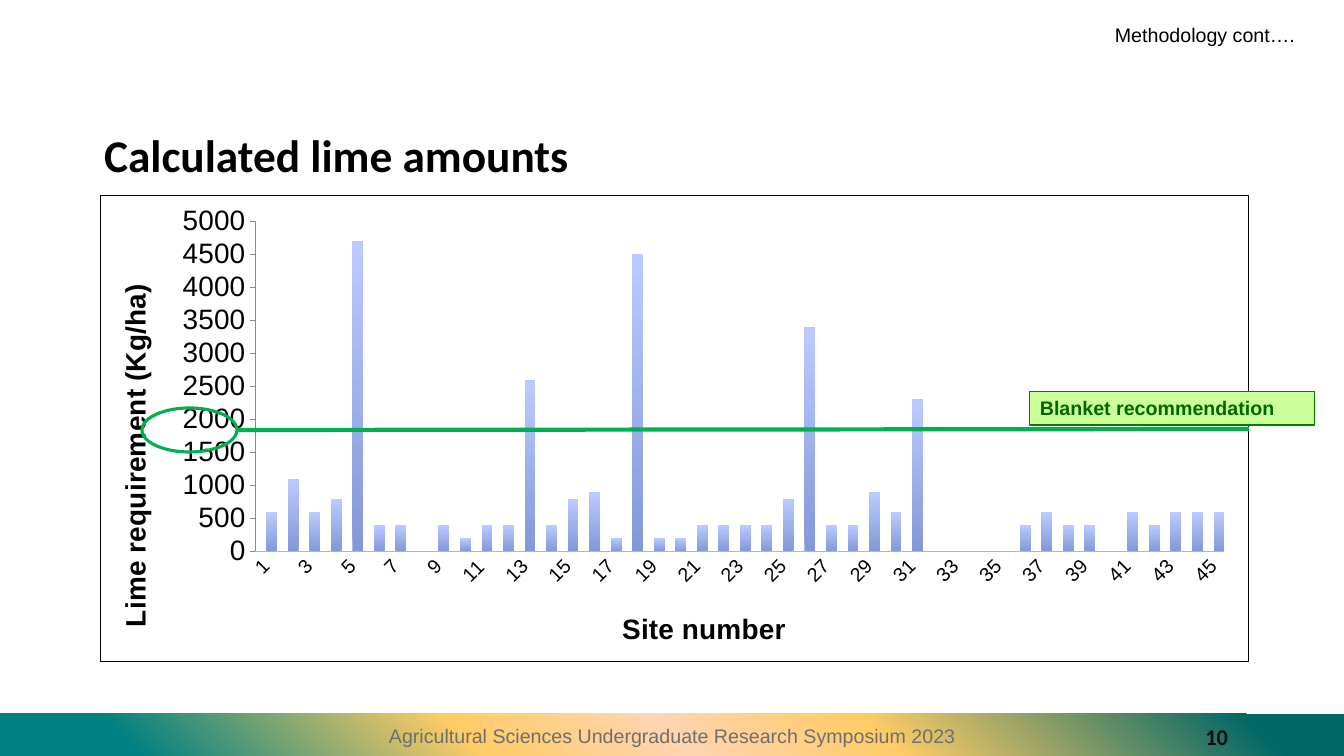
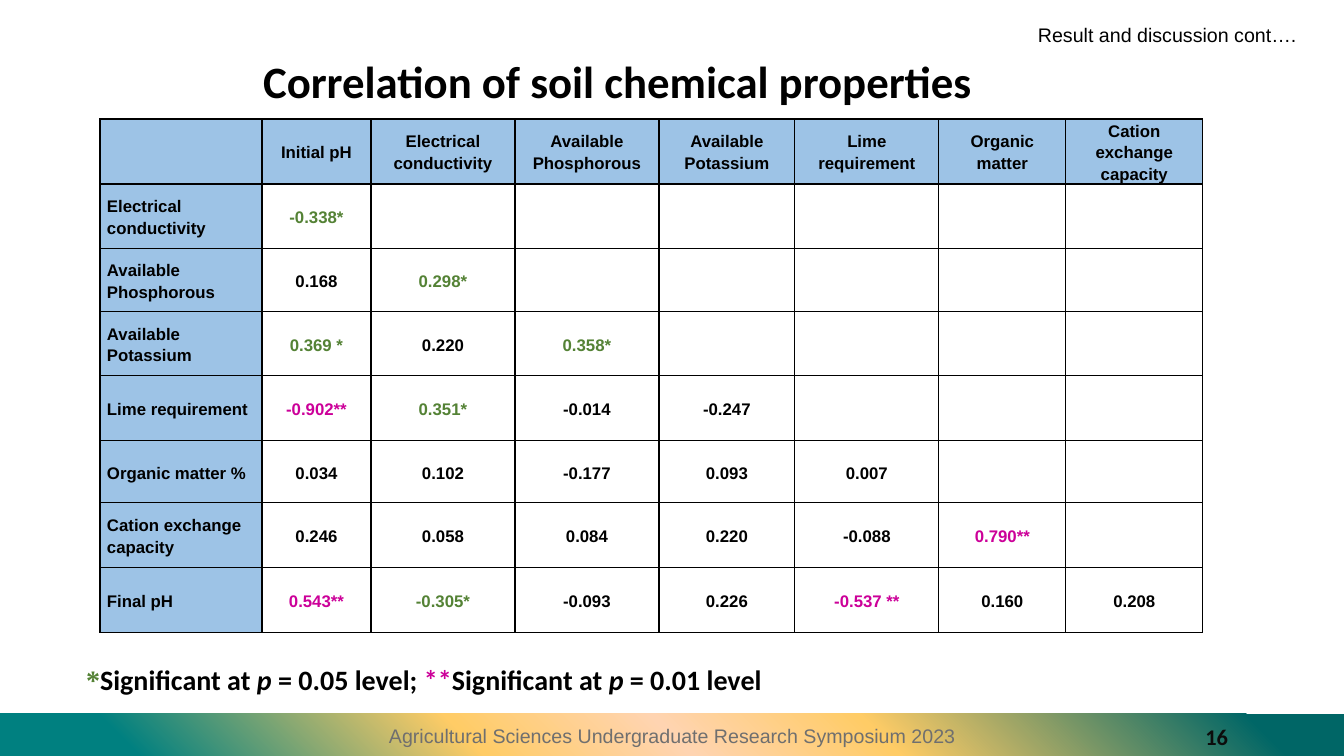
from lxml import etree
from pptx import Presentation
from pptx.chart import data
from pptx.dml import color
from pptx.enum import chart as charts, shapes, text
from pptx.oxml import ns, parse_xml
from pptx.util import Emu, Pt

EMU_PER_PX = 914400 / 100.8
COLORS = {
    "black": "000000", "white": "FFFFFF", "ink": "0C0C0C", "grey": "6F6F6F",
    "axis": "8B8B8B", "baseline": "A4B4E4", "bar_top": "BCCBFF", "bar_bottom": "8298D8",
    "header": "9DC3E6", "green": "548235", "magenta": "CC0099", "marker": "00B050",
    "label_fill": "CCFF99", "label_line": "008000", "label_text": "006600",
}
BAND_STOPS = [(0, "008080"), (10, "008080"), (35, "FFCC66"), (50, "FFD4B1"),
              (65, "FFCC66"), (93, "006666"), (100, "006666")]
FOOTER = "Agricultural Sciences Undergraduate Research Symposium 2023"
TITLE = {"name": "Calibri", "size": Pt(32), "bold": True}
NOTE = {"name": "Calibri", "size": Pt(20), "bold": True, "italic": False}
NUMBER = {"name": "Calibri", "size": Pt(16), "bold": True}
PLAIN = {"name": "Arial", "size": Pt(14), "bold": False}
STRONG = {"name": "Arial", "size": Pt(14), "bold": True}
CELL = {"name": "Arial", "size": Pt(12), "bold": True}
AXIS_TITLE = {"name": "Arial", "size": Pt(20), "bold": True}
LEFT, CENTER, RIGHT = text.PP_ALIGN.LEFT, text.PP_ALIGN.CENTER, text.PP_ALIGN.RIGHT


def px(length):
    return Emu(round(length * EMU_PER_PX))


def rgb(name):
    return color.RGBColor.from_string(COLORS[name])


def assign(target, values):
    for name, value in values.items():
        setattr(target, name, value)


def style_font(font, values, color_name="black"):
    assign(font, values)
    font.color.rgb = rgb(color_name)


def set_layout(parent, index, **values):
    for old in parent.findall(ns.qn("c:layout")):
        parent.remove(old)
    layout = etree.Element(ns.qn("c:layout"))
    manual = etree.SubElement(layout, ns.qn("c:manualLayout"))
    for name, value in values.items():
        etree.SubElement(manual, ns.qn("c:" + name)).set("val", str(value))
    parent.insert(index, layout)


class Deck:
    def __init__(self):
        self.presentation = Presentation()
        assign(self.presentation, {"slide_width": px(1344), "slide_height": px(756)})
        self.slide = None

    def add_slide(self, layout_index):
        layout = self.presentation.slide_layouts[layout_index]
        self.slide = self.presentation.slides.add_slide(layout)

    def place(self, shape, box):
        assign(shape, dict(zip(("left", "top", "width", "height"), map(px, box))))

    def set_text(self, frame, runs, align=LEFT, spacing=1.0, anchor=text.MSO_ANCHOR.MIDDLE):
        assign(frame, {"word_wrap": True, "auto_size": text.MSO_AUTO_SIZE.NONE,
                       "vertical_anchor": anchor})
        paragraph = frame.paragraphs[0]
        assign(paragraph, {"alignment": align, "line_spacing": spacing, "space_before": Pt(0)})
        for content, values, color_name in runs:
            run = paragraph.add_run()
            run.text = content
            style_font(run.font, values, color_name)
        return paragraph

    def title(self, content, box, size=32):
        shape = self.slide.shapes.title
        self.place(shape, box)
        values = {**TITLE, "size": Pt(size)}
        self.set_text(shape.text_frame, [(content, values, "black")], spacing=0.9)

    def body(self, runs, box):
        shape = self.slide.placeholders[1]
        self.place(shape, box)
        paragraph = self.set_text(shape.text_frame, runs, spacing=0.9, anchor=text.MSO_ANCHOR.TOP)
        properties = paragraph._p.get_or_add_pPr()
        properties.set("marL", str(px(12)))
        properties.set("indent", "0")
        etree.SubElement(properties, ns.qn("a:buNone"))

    def text_box(self, content, box, values, color_name, align):
        shape = self.slide.shapes.add_textbox(*map(px, box))
        self.set_text(shape.text_frame, [(content, values, color_name)], align)

    def shape(self, kind, box, fill=None, line=None, width=0.75):
        shape = self.slide.shapes.add_shape(kind, *map(px, box))
        shape.shadow.inherit = False
        if fill:
            shape.fill.solid()
            shape.fill.fore_color.rgb = rgb(fill)
        else:
            shape.fill.background()
        if line:
            shape.line.color.rgb = rgb(line)
            shape.line.width = Pt(width)
        else:
            shape.line.fill.background()
        return shape

    def label(self, content, box, values=PLAIN, color_name="black", fill="white", line=None):
        shape = self.shape(shapes.MSO_SHAPE.RECTANGLE, box, fill, line)
        self.set_text(shape.text_frame, [(content, values, color_name)])

    def line(self, start, end, color_name, width):
        connector = self.slide.shapes.add_connector(
            shapes.MSO_CONNECTOR.STRAIGHT, *map(px, start + end))
        connector.line.color.rgb = rgb(color_name)
        connector.line.width = Pt(width)
        etree.SubElement(connector.element.spPr, ns.qn("a:effectLst"))

    def master_band(self):
        band = self.shape(shapes.MSO_SHAPE.RECTANGLE, (0, 714, 1344, 42))
        stops = "".join(f'<a:gs pos="{position * 1000}"><a:srgbClr val="{value}"/></a:gs>'
                        for position, value in BAND_STOPS)
        gradient = parse_xml(
            f'<a:gradFill {ns.nsdecls("a")} rotWithShape="1"><a:gsLst>{stops}</a:gsLst>'
            '<a:path path="circle"><a:fillToRect t="100000" r="100000"/></a:path></a:gradFill>')
        properties = band.element.spPr
        properties.replace(properties.find(ns.qn("a:noFill")), gradient)
        self.presentation.slide_master.shapes.element.append(band.element)

    def footer(self, number):
        self.text_box(number, (935, 717, 303, 40), NUMBER, "ink", RIGHT)
        self.text_box(FOOTER, (115, 716, 1115, 40), PLAIN, "grey", CENTER)

    def axis(self, axis, caption, size, line, tick, x, y):
        assign(axis, {"has_major_gridlines": False, "has_title": True, "major_tick_mark": tick,
                      "minor_tick_mark": charts.XL_TICK_MARK.NONE})
        style_font(axis.tick_labels.font, {"name": "Arial", "size": Pt(size)})
        axis.format.line.color.rgb = rgb(line)
        run = axis.axis_title.text_frame.paragraphs[0].add_run()
        run.text = caption
        style_font(run.font, AXIS_TITLE)
        set_layout(axis.axis_title.element, 1, xMode="edge", yMode="edge", x=x, y=y)

    def column_chart(self, categories, series, box):
        chart_data = data.CategoryChartData()
        chart_data.categories = categories
        for name, values in series.items():
            chart_data.add_series(name, values)
        chart = self.slide.shapes.add_chart(
            charts.XL_CHART_TYPE.COLUMN_CLUSTERED, *map(px, box), chart_data).chart
        assign(chart, {"has_legend": False, "has_title": False})
        style_font(chart.font, {"name": "Arial", "size": Pt(10)})
        plot = chart.plots[0]
        assign(plot, {"gap_width": 0, "overlap": 0, "vary_by_categories": False})
        for columns in plot.series:
            fill = columns.format.fill
            fill.gradient()
            fill.gradient_angle = 90
            for stop, name in zip(fill.gradient_stops, ("bar_bottom", "bar_top")):
                stop.color.rgb = rgb(name)
        ticks = charts.XL_TICK_MARK
        self.axis(chart.category_axis, "Site number", 14, "baseline", ticks.NONE, 0.45, 0.88)
        self.axis(chart.value_axis, "Lime requirement (Kg/ha)", 20, "axis", ticks.OUTSIDE, 0.01, 0.18)
        assign(chart.value_axis, {"minimum_scale": 0, "maximum_scale": 5000, "major_unit": 500})
        root = chart.element
        root.xpath("//c:catAx/c:txPr/a:bodyPr")[0].set("rot", "-2700000")
        skip = etree.Element(ns.qn("c:tickLblSkip"))
        skip.set("val", "2")
        root.xpath("//c:catAx/c:noMultiLvlLbl")[0].addprevious(skip)
        set_layout(root.xpath("//c:plotArea")[0], 0, layoutTarget="inner", xMode="edge",
                   yMode="edge", x=0.135, y=0.055, w=0.844, h=0.709)
        root.find(ns.qn("c:txPr")).addprevious(parse_xml(
            f'<c:spPr {ns.nsdecls("c", "a")}><a:solidFill><a:srgbClr val="{COLORS["white"]}"/>'
            f'</a:solidFill><a:ln w="9525"><a:solidFill><a:srgbClr val="{COLORS["black"]}"/>'
            '</a:solidFill></a:ln></c:spPr>'))

    def cell(self, cell, content, heading, align):
        assign(cell, {"margin_left": px(7), "margin_right": px(7), "margin_top": 0,
                      "margin_bottom": 0, "vertical_anchor": text.MSO_ANCHOR.MIDDLE})
        cell.fill.solid()
        cell.fill.fore_color.rgb = rgb("header" if heading else "white")
        properties = cell._tc.get_or_add_tcPr()
        for index, side in enumerate("LRTB"):
            properties.insert(index, parse_xml(
                f'<a:ln{side} {ns.nsdecls("a")} w="12700"><a:solidFill>'
                f'<a:srgbClr val="{COLORS["black"]}"/></a:solidFill></a:ln{side}>'))
        if content:
            stars = content.count("*")
            paragraph = cell.text_frame.paragraphs[0]
            assign(paragraph, {"alignment": align, "line_spacing": 1.15})
            run = paragraph.add_run()
            run.text = content
            style_font(run.font, CELL, ("black", "green", "magenta")[stars])

    def table(self, rows, left, top, widths, heights):
        box = (left, top, sum(widths), sum(heights))
        table = self.slide.shapes.add_table(len(rows), len(widths), *map(px, box)).table
        assign(table, {"first_row": False, "horz_banding": False})
        for column, width in zip(table.columns, widths):
            column.width = px(width)
        for row, height in zip(table.rows, heights):
            row.height = px(height)
        for i, row in enumerate(rows):
            for j in range(len(widths)):
                content = row[j] if j < len(row) else ""
                self.cell(table.cell(i, j), content, i == 0 or j == 0, CENTER if j else LEFT)


LIME = [600, 1100, 600, 800, 4700, 400, 400, 0, 400, 200, 400, 400, 2600, 400, 800,
        900, 200, 4500, 200, 200, 400, 400, 400, 400, 800, 3400, 400, 400, 900, 600,
        2300, 0, 0, 0, 0, 400, 600, 400, 400, 0, 600, 400, 600, 600, 600]
CORRELATIONS = [
    ["", "Initial pH", "Electrical conductivity", "Available Phosphorous", "Available Potassium",
     "Lime requirement", "Organic matter", "Cation exchange capacity"],
    ["Electrical conductivity", "-0.338*"],
    ["Available Phosphorous", "0.168", "0.298*"],
    ["Available Potassium", "0.369 *", "0.220", "0.358*"],
    ["Lime requirement", "-0.902**", "0.351*", "-0.014", "-0.247"],
    ["Organic matter %", "0.034", "0.102", "-0.177", "0.093", "0.007"],
    ["Cation exchange capacity", "0.246", "0.058", "0.084", "0.220", "-0.088", "0.790**"],
    ["Final pH", "0.543**", "-0.305*", "-0.093", "0.226", "-0.537 **", "0.160", "0.208"],
]
ITALIC = {**NOTE, "italic": True}
SIGNIFICANCE = [
    ("*", {**NOTE, "name": "Times New Roman"}, "green"),
    ("Significant at ", NOTE, "black"), ("p ", ITALIC, "black"), ("= 0.05 level; ", NOTE, "black"),
    ("**", NOTE, "magenta"),
    ("Significant at ", NOTE, "black"), ("p ", ITALIC, "black"), ("= 0.01 level", NOTE, "black"),
]


def lime_slide(deck):
    deck.title("Calculated lime amounts", (94, 121, 660, 74), 32.4)
    sites = [str(site) for site in range(1, len(LIME) + 1)]
    deck.column_chart(sites, {"Series 1": [0] * len(LIME), "Series 2": LIME}, (100, 195, 1149, 467))
    deck.label("Methodology cont….", (1105, 18, 221, 34))
    deck.label("Blanket recommendation", (1030, 391, 285, 34), STRONG,
               "label_text", "label_fill", "label_line")
    deck.line((238, 430), (1249, 429), "marker", 3)
    deck.shape(shapes.MSO_SHAPE.OVAL, (142, 408, 95, 44), line="marker", width=2.25)
    deck.footer("10")


def correlation_slide(deck):
    deck.title("Correlation of soil chemical properties", (253, 19, 1023, 130))
    deck.body(SIGNIFICANCE, (64, 661, 1163, 32))
    deck.table(CORRELATIONS, 100, 119, [162, 109, 144, 144, 136, 144, 127, 137],
               [64, 65, 63, 64, 65, 62, 65, 65])
    deck.footer("16")
    deck.label("Result and discussion cont….", (1028, 18, 297, 34))


def main():
    deck = Deck()
    deck.add_slide(5)
    deck.master_band()
    lime_slide(deck)
    deck.add_slide(1)
    correlation_slide(deck)
    deck.presentation.save("out.pptx")


if __name__ == "__main__":
    main()
